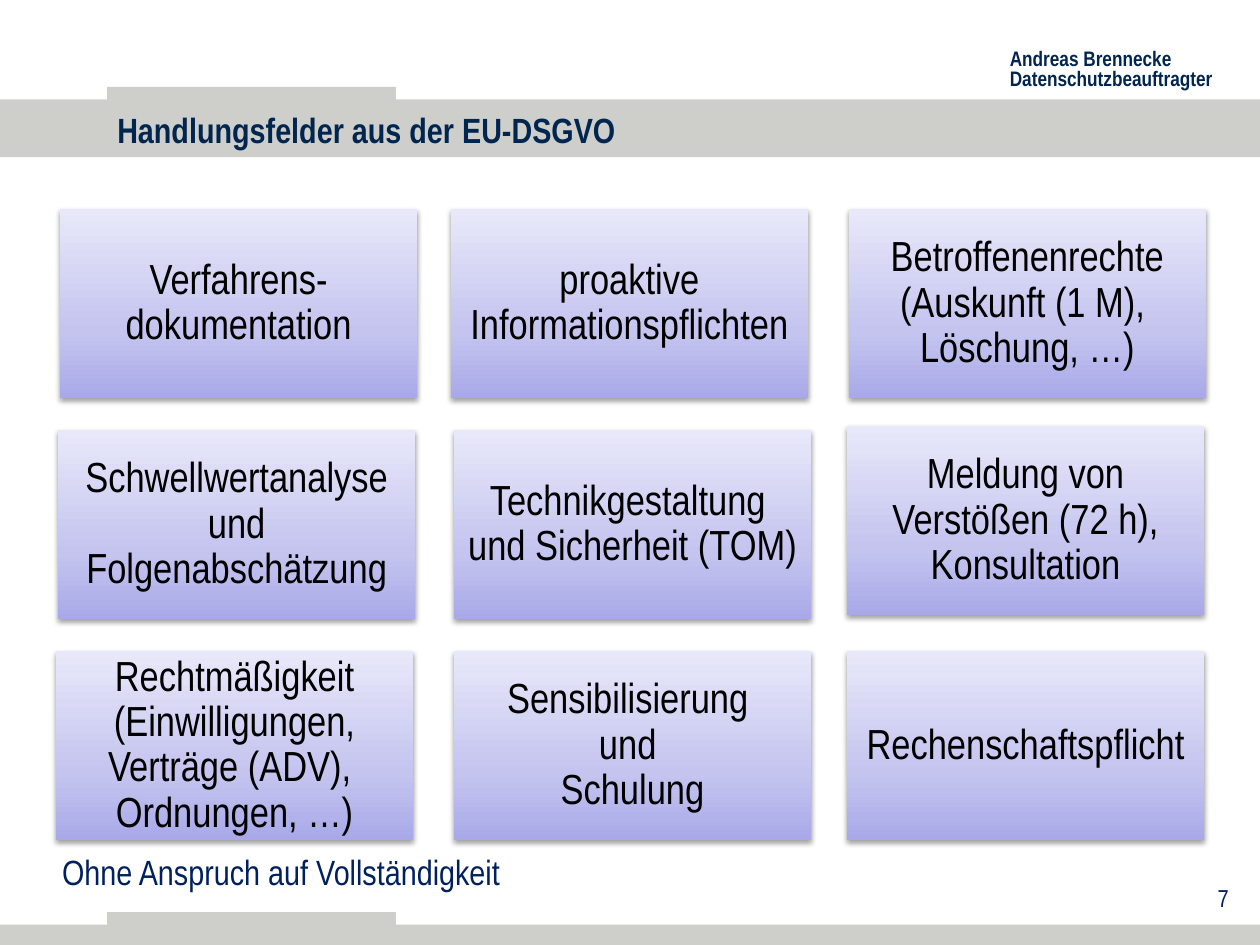
from dataclasses import dataclass

from lxml import etree
from pptx import Presentation
from pptx import util as u
from pptx.dml import color
from pptx.enum import shapes, text
from pptx.oxml import ns


@dataclass(frozen=True)
class Theme:
    font: str = "Arial Narrow"
    bar: str = "CECFCB"
    heading: str = "00254F"
    note: str = "002060"
    card_text: str = "000000"
    card_stops: tuple = ((0, "A9A9E9"), (35, "C4C4EF"), (100, "E8E8FA"))
    header_size: int = 12
    number_size: int = 14
    title_size: int = 20
    card_size: int = 24


THEME = Theme()
CARD_WIDTH, CARD_HEIGHT = 204, 108
CARD_INSET = 7.2

BARS = [
    (0, 56.8, 720, 33),
    (0, 528.4, 720, 12),
    (61.2, 49.7, 165, 9.4),
    (61.2, 521.2, 165, 9.4),
]

CARDS = [
    (34.3, 119.5, "Verfahrens-dokumentation"),
    (257.6, 119.5, "proaktive Informationspflichten"),
    (485, 119.5, "Betroffenenrechte (Auskunft (1 M), \nLöschung, …)"),
    (33.2, 245.8, "Schwellwertanalyse und Folgenabschätzung"),
    (259.4, 245.8, "Technikgestaltung \nund Sicherheit (TOM)"),
    (484, 243.4, "Meldung von Verstößen (72 h), Konsultation"),
    (32, 372, "Rechtmäßigkeit (Einwilligungen, Verträge (ADV), \nOrdnungen, …)"),
    (259.4, 372, "Sensibilisierung \nund \nSchulung"),
    (484, 372, "Rechenschaftspflicht"),
]


def apply_format(target, values):
    for name, value in values.items():
        setattr(target, name, value)


def points(box):
    return [u.Pt(value) for value in box]


def write_text(shape, content, size, rgb, bold=False, frame=None, paragraph=None):
    apply_format(shape.text_frame, frame or {})
    line = shape.text_frame.paragraphs[0]
    line.text = content
    apply_format(line, paragraph or {})
    for run in line.runs:
        apply_format(run.font, {"name": THEME.font, "size": u.Pt(size), "bold": bold})
        run.font.color.rgb = color.RGBColor.from_string(rgb)


def add_rectangle(slide, box):
    shape = slide.shapes.add_shape(shapes.MSO_SHAPE.RECTANGLE, *points(box))
    shape.shadow.inherit = False
    shape.line.fill.background()
    return shape


def add_bar(slide, box):
    shape = add_rectangle(slide, box)
    shape.fill.solid()
    shape.fill.fore_color.rgb = color.RGBColor.from_string(THEME.bar)


def add_child(parent, tag, **attributes):
    values = {name: str(value) for name, value in attributes.items()}
    return etree.SubElement(parent, ns.qn(tag), values)


def set_card_gradient(shape):
    shape.fill.gradient()
    gradient = shape.element.spPr.find(ns.qn("a:gradFill"))
    for child in list(gradient):
        gradient.remove(child)
    stops = add_child(gradient, "a:gsLst")
    for position, rgb in THEME.card_stops:
        stop = add_child(stops, "a:gs", pos=position * 1000)
        add_child(stop, "a:srgbClr", val=rgb)
    add_child(gradient, "a:lin", ang=270 * 60000, scaled=0)


def set_card_shadow(shape):
    effects = shape.element.spPr.find(ns.qn("a:effectLst"))
    shadow = add_child(effects, "a:outerShdw", blurRad=u.Pt(3.1), dist=u.Pt(1.6),
                       dir=90 * 60000, rotWithShape=0)
    shade = add_child(shadow, "a:srgbClr", val="000000")
    add_child(shade, "a:alpha", val=38000)


def add_card(slide, left, top, content):
    shape = add_rectangle(slide, (left, top, CARD_WIDTH, CARD_HEIGHT))
    set_card_gradient(shape)
    set_card_shadow(shape)
    sides = ("left", "top", "right", "bottom")
    frame = {f"margin_{side}": u.Pt(CARD_INSET) for side in sides}
    frame.update(word_wrap=True, vertical_anchor=text.MSO_ANCHOR.MIDDLE)
    write_text(shape, content, THEME.card_size, THEME.card_text, frame=frame,
               paragraph={"alignment": text.PP_ALIGN.CENTER, "line_spacing": 0.9})


def add_label(slide, box, content, size, rgb, **options):
    shape = slide.shapes.add_textbox(*points(box))
    write_text(shape, content, size, rgb, **options)


def place_title(slide, box, content):
    title = slide.shapes.title
    title.element.getparent().append(title.element)
    apply_format(title, dict(zip(("left", "top", "width", "height"), points(box))))
    write_text(title, content, THEME.title_size, THEME.heading, bold=True,
               frame={"vertical_anchor": text.MSO_ANCHOR.MIDDLE,
                      "auto_size": text.MSO_AUTO_SIZE.NONE, "word_wrap": True},
               paragraph={"alignment": text.PP_ALIGN.LEFT})


def main():
    presentation = Presentation()
    apply_format(presentation, {"slide_width": u.Pt(720), "slide_height": u.Pt(540)})
    slide = presentation.slides.add_slide(presentation.slide_layouts[5])
    growing = {"word_wrap": False, "auto_size": text.MSO_AUTO_SIZE.SHAPE_TO_FIT_TEXT}

    for box in BARS:
        add_bar(slide, box)
    add_label(slide, (570, 25.2, 131.8, 30.2), "Andreas Brennecke\nDatenschutzbeauftragter",
              THEME.header_size, THEME.heading, bold=True, frame=growing,
              paragraph={"line_spacing": 0.8})
    place_title(slide, (59.8, 59, 626.4, 30.2), "Handlungsfelder aus der EU-DSGVO")
    for card in CARDS:
        add_card(slide, *card)
    add_label(slide, (549.4, 501.1, 159.8, 31), "7", THEME.number_size, THEME.note,
              frame={"word_wrap": True}, paragraph={"alignment": text.PP_ALIGN.RIGHT})
    add_label(slide, (28.4, 482.4, 267, 31.7), "Ohne Anspruch auf Vollständigkeit",
              THEME.title_size, THEME.note, frame=growing)

    presentation.save("out.pptx")


if __name__ == "__main__":
    main()
